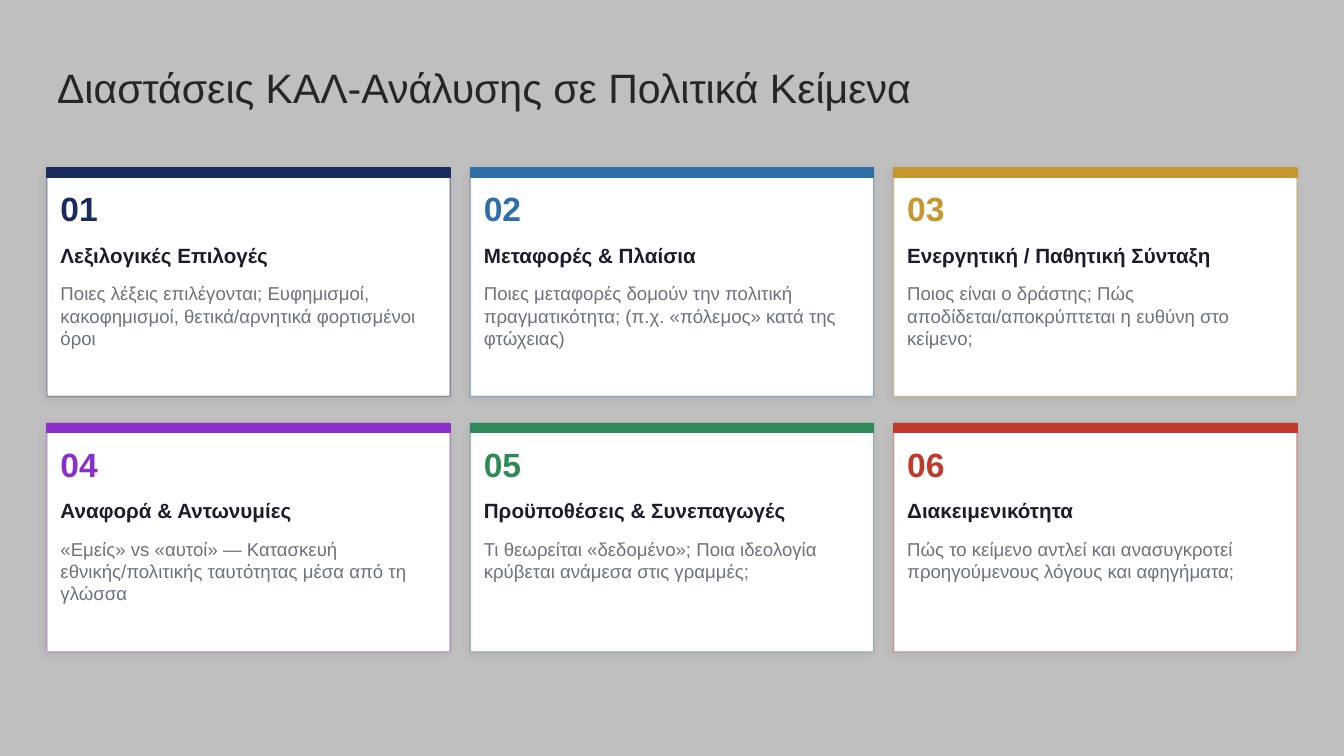
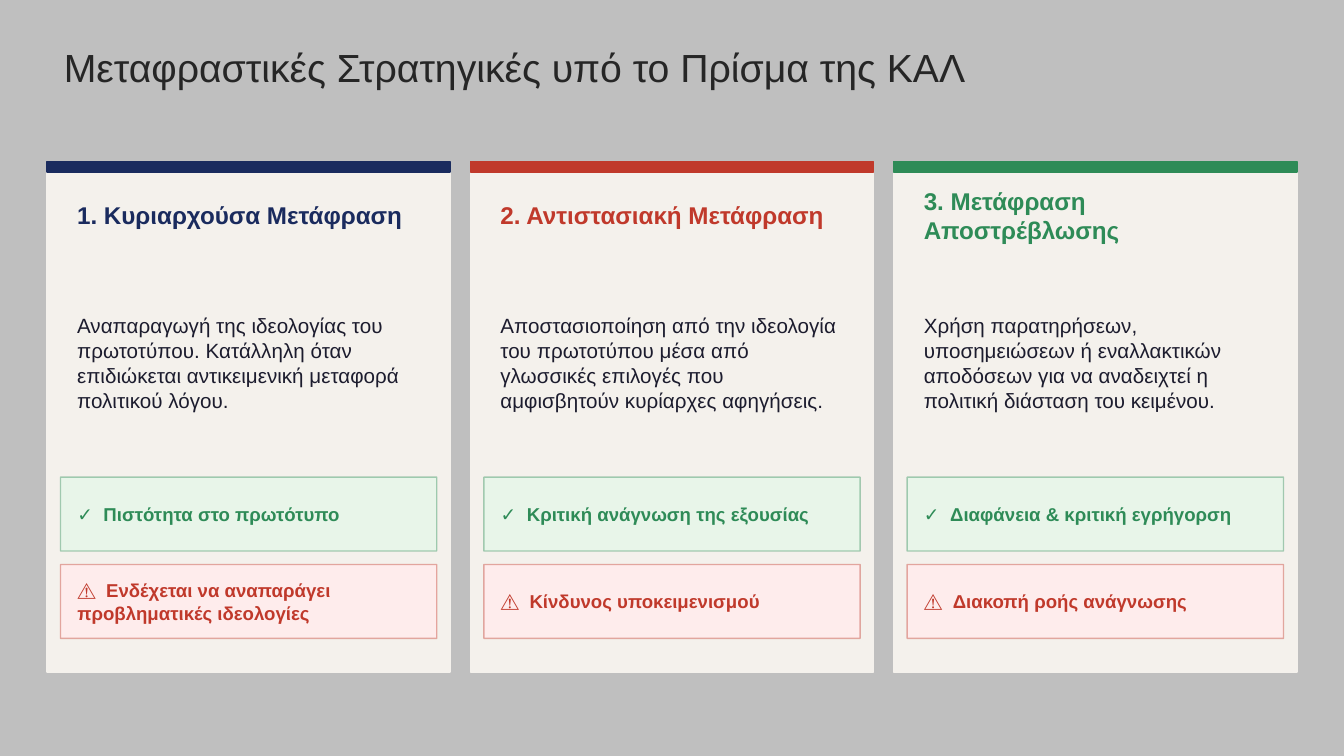
from lxml import etree
from pptx import Presentation
from pptx import util as u
from pptx.dml.color import RGBColor
from pptx.enum import shapes, text
from pptx.oxml import ns

PX = 6096  # EMU per px: 150 px to the inch
FONT = "Arial"
COLORS = {
    "background": "BFBFBF", "title": "262626", "ink": "1C1C2E", "muted": "6B7280",
    "white": "FFFFFF", "cream": "F4F1EC", "mint": "E8F5E9", "blush": "FEECEC",
    "navy": "1A2B5E", "blue": "2E6FA8", "gold": "C8962E",
    "purple": "8B2FC9", "green": "2E8B57", "red": "C0392B", "shadow": "000000",
}

# Three columns shared by both slides
COLUMNS = 3
LEFT, CARD_W, PITCH_X = 70, 600, 630
PAD = 20
INNER_W = CARD_W - 2 * PAD

DIMENSIONS = [
    ("navy", "Λεξιλογικές Επιλογές",
     "Ποιες λέξεις επιλέγονται; Ευφημισμοί, κακοφημισμοί, θετικά/αρνητικά φορτισμένοι όροι"),
    ("blue", "Μεταφορές & Πλαίσια",
     "Ποιες μεταφορές δομούν την πολιτική πραγματικότητα; (π.χ. «πόλεμος» κατά της φτώχειας)"),
    ("gold", "Ενεργητική / Παθητική Σύνταξη",
     "Ποιος είναι ο δράστης; Πώς αποδίδεται/αποκρύπτεται η ευθύνη στο κείμενο;"),
    ("purple", "Αναφορά & Αντωνυμίες",
     "«Εμείς» vs «αυτοί» — Κατασκευή εθνικής/πολιτικής ταυτότητας μέσα από τη γλώσσα"),
    ("green", "Προϋποθέσεις & Συνεπαγωγές",
     "Τι θεωρείται «δεδομένο»; Ποια ιδεολογία κρύβεται ανάμεσα στις γραμμές;"),
    ("red", "Διακειμενικότητα",
     "Πώς το κείμενο αντλεί και ανασυγκροτεί προηγούμενους λόγους και αφηγήματα;"),
]

STRATEGIES = [
    ("navy", "1. Κυριαρχούσα Μετάφραση",
     "Αναπαραγωγή της ιδεολογίας του πρωτοτύπου. Κατάλληλη όταν επιδιώκεται "
     "αντικειμενική μεταφορά πολιτικού λόγου.",
     "Πιστότητα στο πρωτότυπο", "Ενδέχεται να αναπαράγει προβληματικές ιδεολογίες"),
    ("red", "2. Αντιστασιακή Μετάφραση",
     "Αποστασιοποίηση από την ιδεολογία του πρωτοτύπου μέσα από γλωσσικές επιλογές "
     "που αμφισβητούν κυρίαρχες αφηγήσεις.",
     "Κριτική ανάγνωση της εξουσίας", "Κίνδυνος υποκειμενισμού"),
    ("green", "3. Μετάφραση Αποστρέβλωσης",
     "Χρήση παρατηρήσεων, υποσημειώσεων ή εναλλακτικών αποδόσεων για να αναδειχτεί "
     "η πολιτική διάσταση του κειμένου.",
     "Διαφάνεια & κριτική εγρήγορση", "Διακοπή ροής ανάγνωσης"),
]


def px(*lengths):
    return [u.Emu(length * PX) for length in lengths]


def rgb(name):
    return RGBColor.from_string(COLORS[name])


def add_xml(parent, tag, **attributes):
    child = etree.SubElement(parent, ns.qn(tag))
    for key, value in attributes.items():
        child.set(key, str(value))
    return child


def write(frame, content, size, color, bold=False, middle=True, inset=(15, 8), tab=None):
    """Fill a text frame with one left-aligned paragraph."""
    frame.word_wrap = True
    frame.auto_size = text.MSO_AUTO_SIZE.NONE
    frame.vertical_anchor = text.MSO_ANCHOR.MIDDLE if middle else text.MSO_ANCHOR.TOP
    frame.margin_left = frame.margin_right = inset[0] * PX
    frame.margin_top = frame.margin_bottom = inset[1] * PX
    paragraph = frame.paragraphs[0]
    paragraph.alignment = text.PP_ALIGN.LEFT
    if tab:
        stops = add_xml(paragraph._p.get_or_add_pPr(), "a:tabLst")
        add_xml(stops, "a:tab", pos=tab * PX, algn="l")
    run = paragraph.add_run()
    run.text = content
    run.font.name, run.font.size, run.font.bold = FONT, u.Pt(size), bold
    run.font.color.rgb = rgb(color)


def add_title(slide, content, left, top, size):
    title = slide.shapes.title
    title.left, title.top, title.width, title.height = px(left, top, 1840, 200)
    write(title.text_frame, content, size, "title")


def add_label(slide, box, content, **style):
    write(slide.shapes.add_textbox(*px(*box)).text_frame, content, **style)


def add_panel(slide, box, fill, line, line_alpha=100, shadow=False):
    panel = slide.shapes.add_shape(shapes.MSO_SHAPE.RECTANGLE, *px(*box))
    panel.fill.solid()
    panel.fill.fore_color.rgb = rgb(fill)
    panel.line.color.rgb = rgb(line)
    panel.line.width = u.Pt(1)
    panel.shadow.inherit = False
    properties = panel.element.spPr
    if line_alpha < 100:
        outline = properties.find(ns.qn("a:ln"))
        add_xml(next(outline.iter(ns.qn("a:srgbClr"))), "a:alpha", val=line_alpha * 1000)
    if shadow:
        outer = add_xml(properties.find(ns.qn("a:effectLst")), "a:outerShdw",
                        blurRad=u.Pt(6), dist=u.Pt(2), dir=135 * 60000,
                        algn="bl", rotWithShape=0)
        add_xml(add_xml(outer, "a:srgbClr", val=COLORS["shadow"]), "a:alpha", val=7000)
    return panel


def add_card(slide, left, top, height, band, accent, fill, line, **style):
    add_panel(slide, (left, top, CARD_W, height), fill, line, **style)
    add_panel(slide, (left, top, CARD_W, band), accent, accent)


def add_badge(slide, left, top, mark, content, fill, color, tab):
    badge = add_panel(slide, (left, top, INNER_W, 110), fill, color, line_alpha=40)
    write(badge.text_frame, f"{mark}\t{content}", 13.3, color,
          bold=True, inset=(25, 8), tab=tab)


def build_dimensions(slide):
    add_title(slide, "Διαστάσεις ΚΑΛ-Ανάλυσης σε Πολιτικά Κείμενα", 70, 30, 29.3)
    for index, (accent, heading, question) in enumerate(DIMENSIONS):
        row, column = divmod(index, COLUMNS)
        left, top = LEFT + column * PITCH_X, 250 + row * 380
        add_card(slide, left, top, 340, 14, accent, "white", accent,
                 line_alpha=40, shadow=True)
        inner = left + PAD
        add_label(slide, (inner, top + 20, 100, 80), f"{index + 1:02}",
                  size=24, color=accent, bold=True, inset=(0, 0))
        add_label(slide, (inner, top + 90, INNER_W, 80), heading,
                  size=14.7, color="ink", bold=True, inset=(0, 0))
        add_label(slide, (inner, top + 170, INNER_W, 150), question,
                  size=13.3, color="muted", middle=False, inset=(0, 0))


def build_strategies(slide):
    add_title(slide, "Μεταφραστικές Στρατηγικές υπό το Πρίσμα της ΚΑΛ", 80, 0, 28)
    for column, (accent, heading, summary, benefit, risk) in enumerate(STRATEGIES):
        left = LEFT + column * PITCH_X
        add_card(slide, left, 240, 760, 16, accent, "cream", "cream")
        add_label(slide, (left + 30, 260, 540, 120), heading,
                  size=17.3, color=accent, bold=True)
        add_label(slide, (left + 30, 390, 540, 300), summary, size=14.7, color="ink")
        add_badge(slide, left + PAD, 710, "✓", benefit, "mint", "green", 39)
        add_badge(slide, left + PAD, 840, "⚠", risk, "blush", "red", 43)


def main():
    deck = Presentation()
    deck.slide_width, deck.slide_height = px(2000, 1125)
    backdrop = deck.slide_master.background.fill
    backdrop.solid()
    backdrop.fore_color.rgb = rgb("background")
    title_only = deck.slide_layouts[5]
    for build in (build_dimensions, build_strategies):
        build(deck.slides.add_slide(title_only))
    deck.save("out.pptx")


if __name__ == "__main__":
    main()
